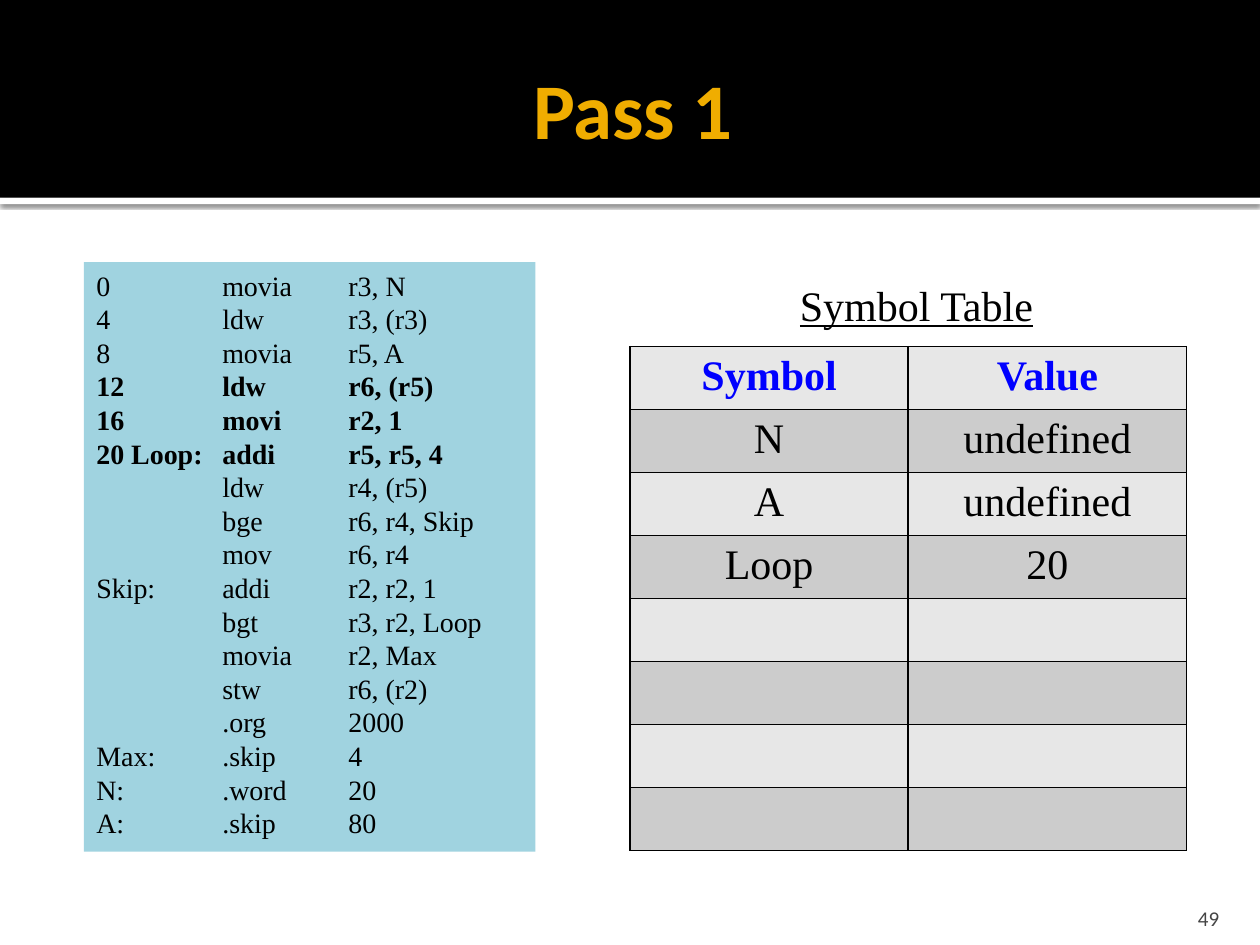
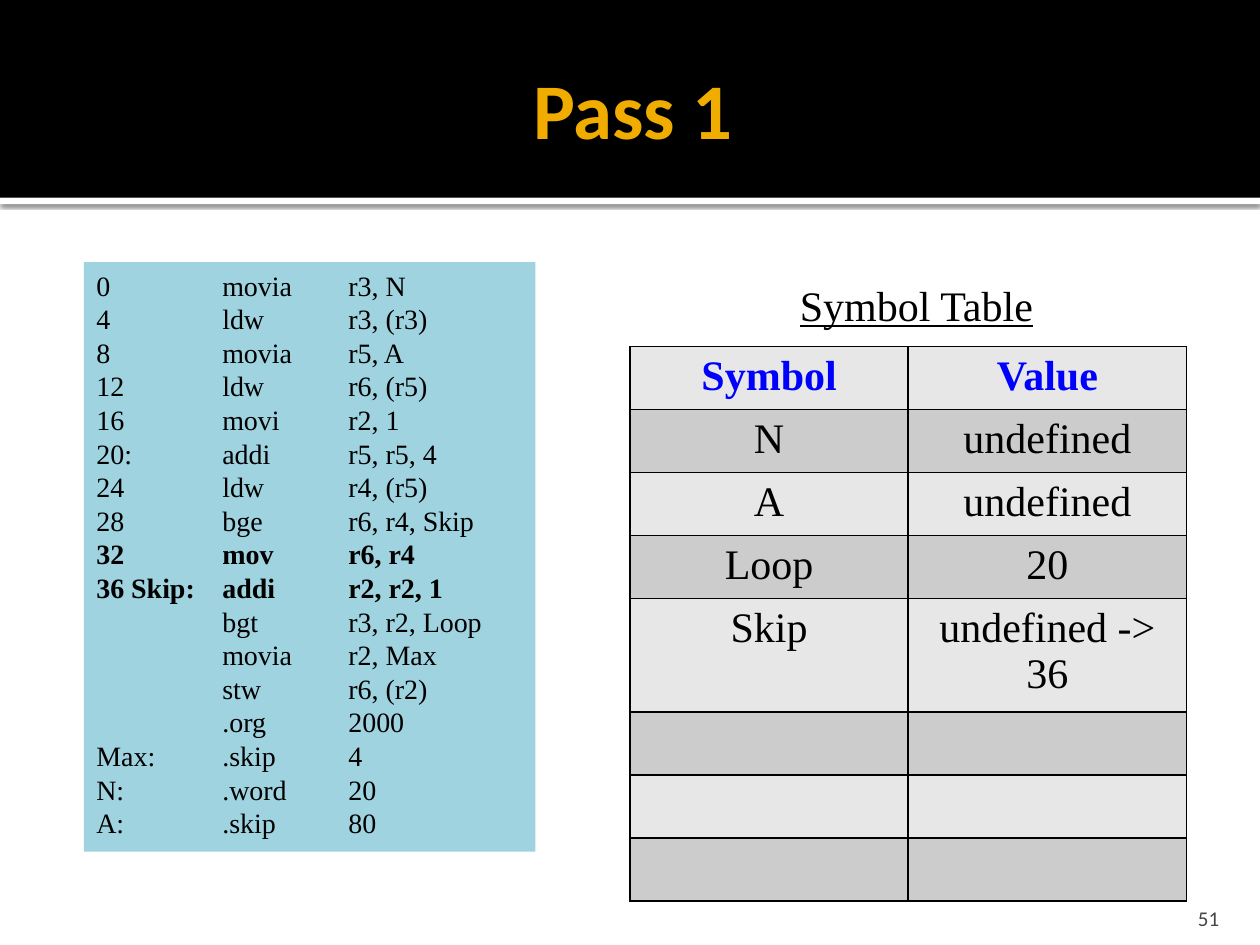
from lxml import etree
from pptx import Presentation, util as u
from pptx.dml.color import RGBColor
from pptx.enum import shapes, text
from pptx.oxml import parse_xml
from pptx.oxml.ns import nsdecls

BLACK = RGBColor(0x00, 0x00, 0x00)
WHITE = RGBColor(0xFF, 0xFF, 0xFF)
GOLD = RGBColor(0xF0, 0xAD, 0x00)
GREY = RGBColor(0x45, 0x45, 0x45)
BLUE = RGBColor(0x00, 0x00, 0xFF)
CODE_FILL = RGBColor(0xA0, 0xD3, 0xE0)
ROW_FILLS = RGBColor(0xE7, 0xE7, 0xE7), RGBColor(0xCC, 0xCC, 0xCC)

LEFT, CENTER, RIGHT = text.PP_ALIGN.LEFT, text.PP_ALIGN.CENTER, text.PP_ALIGN.RIGHT
TOP, MIDDLE, BOTTOM = text.MSO_ANCHOR.TOP, text.MSO_ANCHOR.MIDDLE, text.MSO_ANCHOR.BOTTOM
SERIF = "Times New Roman"

prs = Presentation()
prs.slide_width, prs.slide_height = u.Inches(10), u.Inches(7.5)
COL, ROW = prs.slide_width / 120, prs.slide_height / 90

TITLE = dict(name="Calibri", size=u.Pt(45), bold=True)
NUMBER = dict(name="Calibri", size=u.Pt(12))
CODE = dict(name=SERIF, size=u.Pt(16))
CAPTION = dict(name=SERIF, size=u.Pt(24), underline=True)
CELL = dict(name=SERIF, size=u.Pt(24))

BANDS = [((0, 18.84, 120, 0.6), WHITE), ((0, 0, 120, 18.84), BLACK)]
CODE_BOX = (8, 24.96, 43, 56.16)
SHADOW = (
    f'<a:effectLst {nsdecls("a")}><a:outerShdw blurRad="31750" dist="10160" '
    'dir="5400000" algn="tl" rotWithShape="0"><a:srgbClr val="000000">'
    '<a:alpha val="60000"/></a:srgbClr></a:outerShdw></a:effectLst>'
)
BORDER = (
    '<a:{side} ' + nsdecls("a") + ' w="12700"><a:solidFill>'
    '<a:srgbClr val="000000"/></a:solidFill></a:{side}>'
)
TABS = (
    f'<a:tabLst {nsdecls("a")}>'
    + "".join(f'<a:tab pos="{u.Inches(n)}" algn="l"/>' for n in (1, 2))
    + "</a:tabLst>"
)

PROGRAM = [
    "movia\tr3, N", "ldw\tr3, (r3)", "movia\tr5, A", "ldw\tr6, (r5)",
    "movi\tr2, 1", "addi\tr5, r5, 4", "ldw\tr4, (r5)", "bge\tr6, r4, Skip",
    "mov\tr6, r4", "addi\tr2, r2, 1", "bgt\tr3, r2, Loop", "movia\tr2, Max",
    "stw\tr6, (r2)", ".org\t2000", ".skip\t4", ".word\t20", ".skip\t80",
]
TAIL_LABELS = ["", "", "", "", "Max:", "N:", "A:"]
SYMBOLS = [("Symbol", "Value"), ("N", "undefined"), ("A", "undefined"), ("Loop", "20")]
TABLE_ROWS, ROW_HEIGHT, WRAPPED_HEIGHT = 8, 6, 10.8

SLIDES = [
    dict(number="49", bold=range(3, 6), symbols=SYMBOLS, wrapped=None,
         labels=["0", "4", "8", "12", "16", "20 Loop:", "", "", "", "Skip:"]),
    dict(number="51", bold=range(8, 10), wrapped=4,
         symbols=SYMBOLS + [("Skip", "undefined -> 36")],
         labels=["0", "4", "8", "12", "16", "20:", "24", "28", "32", "36 Skip:"]),
]


def grid(x, y, w, h):
    return [u.Emu(round(n)) for n in (x * COL, y * ROW, w * COL, h * ROW)]


def write(p, words, fmt, color, align=LEFT, bold=None):
    p.alignment = align
    r = p.add_run()
    r.text = words
    for key, value in fmt.items():
        setattr(r.font, key, value)
    if bold is not None:
        r.font.bold = bold
    r.font.color.rgb = color


for page in SLIDES:
    s = prs.slides.add_slide(prs.slide_layouts[6])

    for box, color in BANDS + [(CODE_BOX, CODE_FILL)]:
        sp = s.shapes.add_shape(shapes.MSO_SHAPE.RECTANGLE, *grid(*box))
        sp.fill.solid()
        sp.fill.fore_color.rgb = color
        sp.line.fill.background()
        sp.shadow.inherit = False
        if color == WHITE:
            spPr = sp.fill._xPr
            spPr.replace(spPr.find("{*}effectLst"), parse_xml(SHADOW))

    tf = sp.text_frame
    tf.word_wrap, tf.vertical_anchor = True, TOP
    for i, (label, code) in enumerate(zip(page["labels"] + TAIL_LABELS, PROGRAM)):
        p = tf.add_paragraph() if i else tf.paragraphs[0]
        write(p, f"{label}\t{code}", CODE, BLACK, bold=i in page["bold"])
        p._p.get_or_add_pPr().append(parse_xml(TABS))

    for words, box, fmt, color, align, frame in [
        ("Pass 1", (6, 2.08, 108, 16.44), TITLE, GOLD, CENTER,
         dict(word_wrap=True, vertical_anchor=MIDDLE, margin_right=u.Inches(0.05))),
        (page["number"], (107.7, 85, 9.6, 3.6), NUMBER, GREY, RIGHT,
         dict(word_wrap=True, vertical_anchor=BOTTOM, margin_bottom=0)),
        ("Symbol Table", (75, 26, 25, 6), CAPTION, BLACK, LEFT,
         dict(word_wrap=False, vertical_anchor=TOP)),
    ]:
        tf = s.shapes.add_textbox(*grid(*box)).text_frame
        for key, value in frame.items():
            setattr(tf, key, value)
        write(tf.paragraphs[0], words, fmt, color, align)

    heights = [WRAPPED_HEIGHT if i == page["wrapped"] else ROW_HEIGHT for i in range(TABLE_ROWS)]
    table = s.shapes.add_table(TABLE_ROWS, 2, *grid(60, 33, 53, sum(heights))).table
    table.first_row = table.horz_banding = False
    for i, height in enumerate(heights):
        table.rows[i].height = u.Emu(round(height * ROW))
        for j in range(2):
            cell = table.cell(i, j)
            tcPr = cell._tc.get_or_add_tcPr()
            for side in ("lnL", "lnR", "lnT", "lnB"):
                tcPr.append(etree.fromstring(BORDER.format(side=side)))
            cell.fill.solid()
            cell.fill.fore_color.rgb = ROW_FILLS[i % 2]
            if i < len(page["symbols"]):
                write(cell.text_frame.paragraphs[0], page["symbols"][i][j], CELL,
                      BLACK if i else BLUE, CENTER, bold=i == 0)

prs.save("out.pptx")
